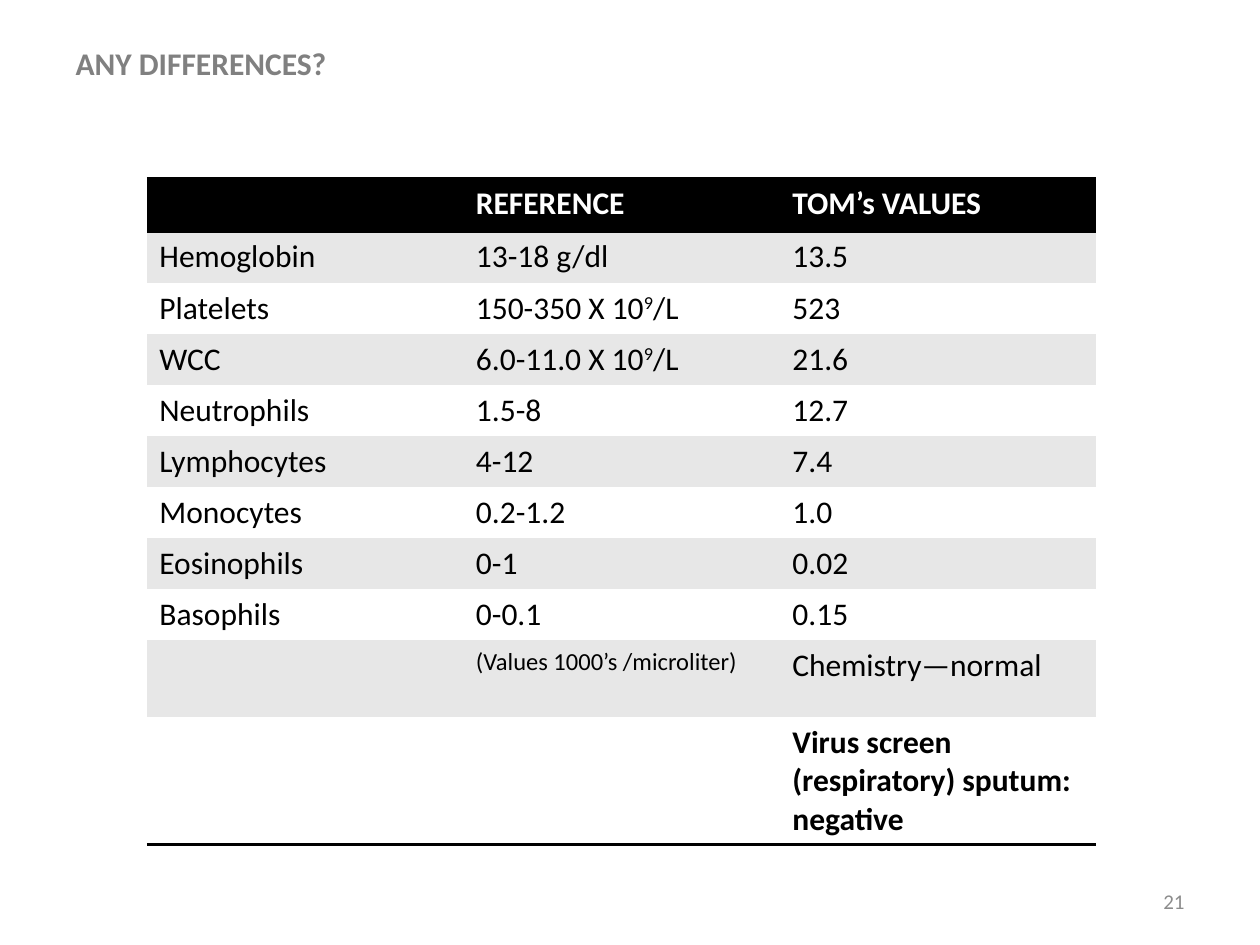
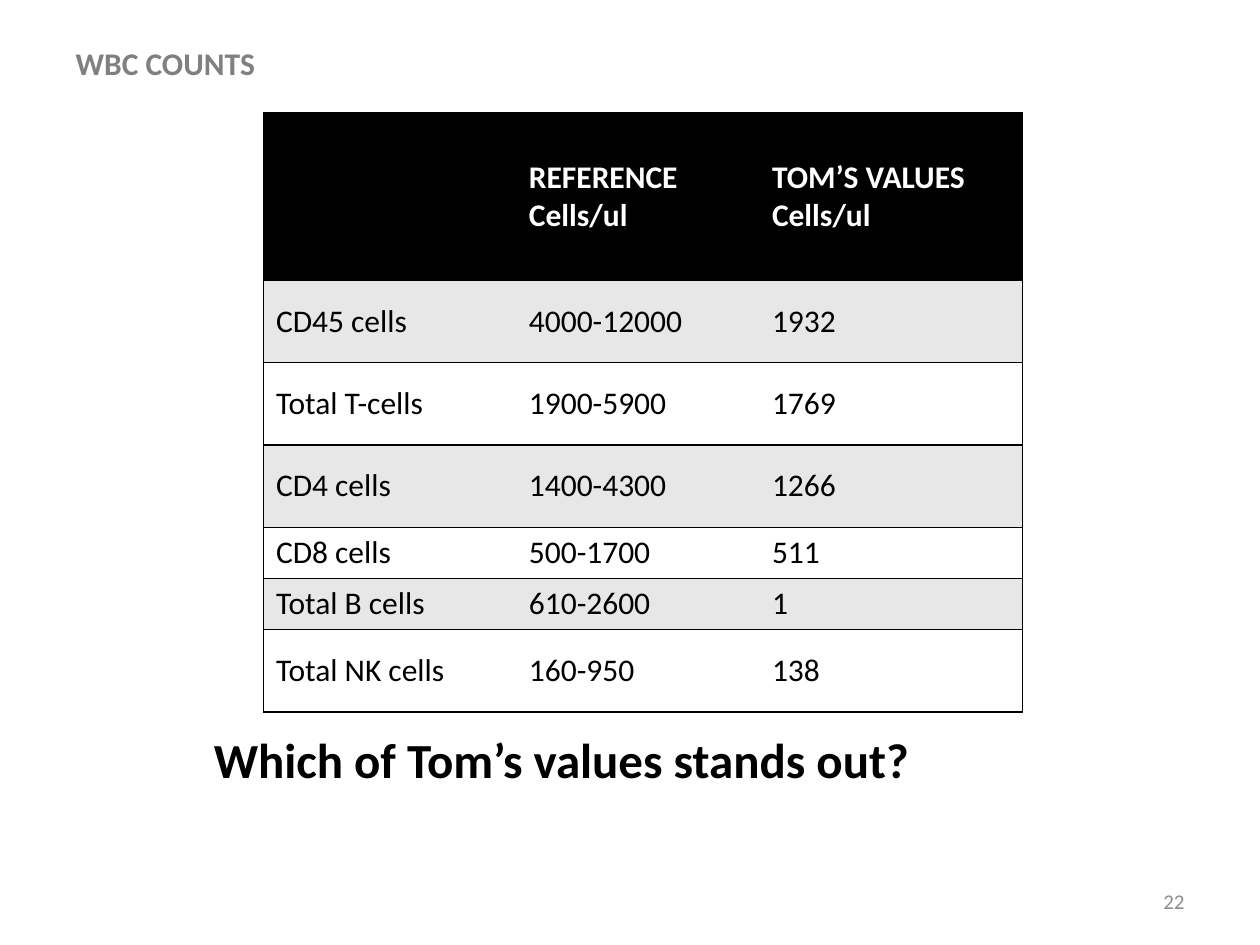
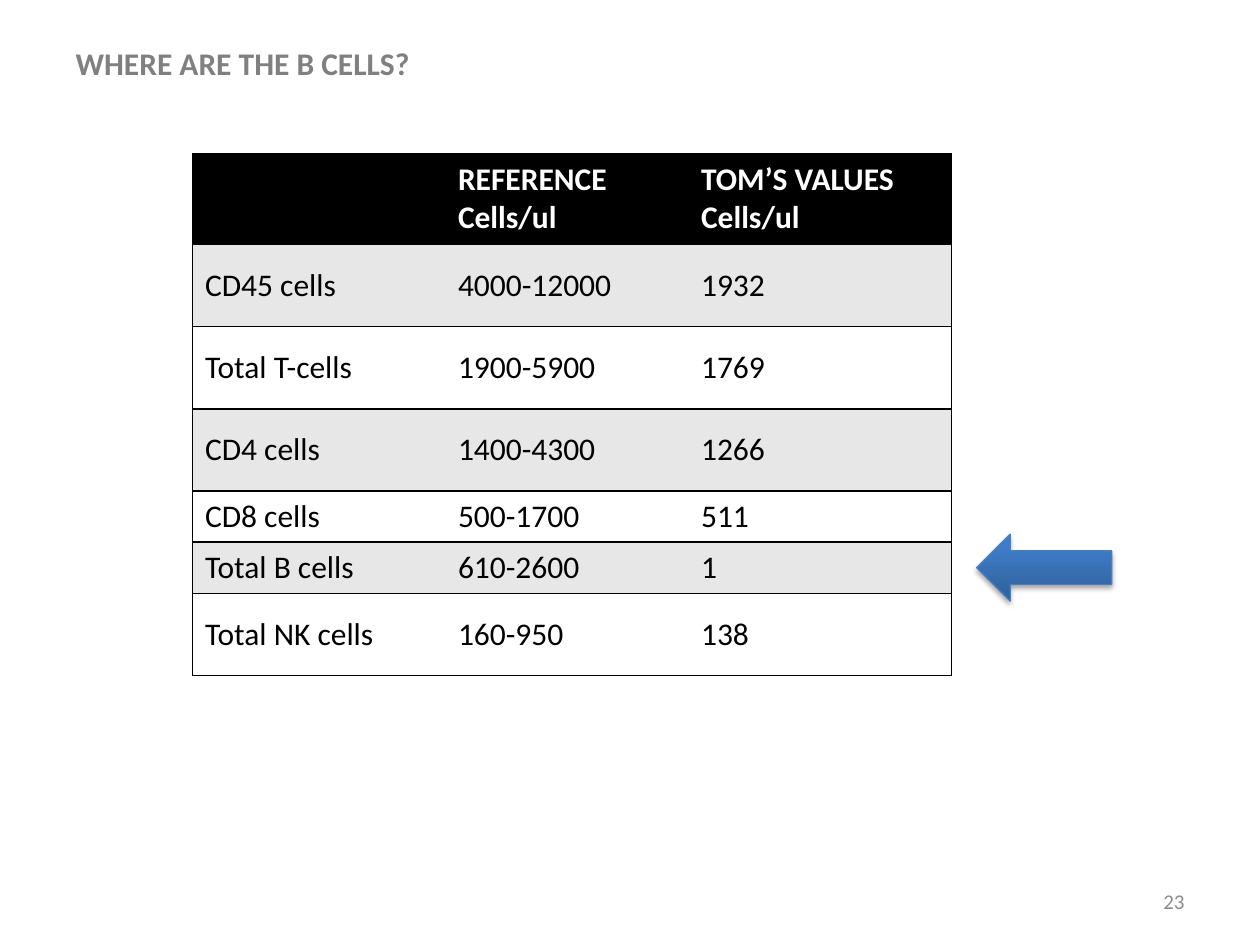
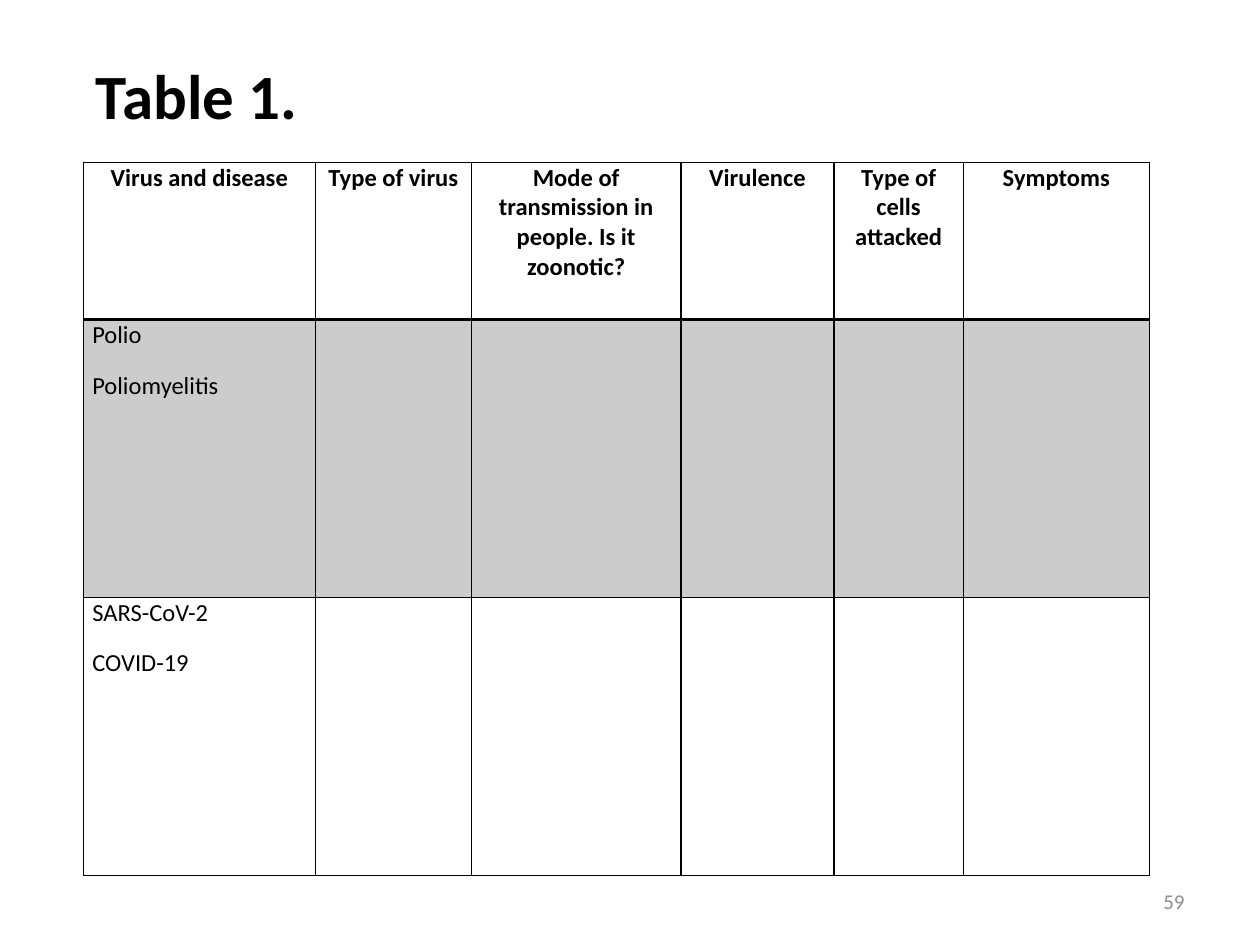
from lxml.etree import SubElement
from pptx import Presentation
from pptx.dml.color import RGBColor
from pptx.enum.shapes import MSO_SHAPE
from pptx.enum.text import MSO_ANCHOR, MSO_AUTO_SIZE, PP_ALIGN
from pptx.oxml import parse_xml
from pptx.oxml.ns import nsdecls, qn
from pptx.util import Cm, Pt

FONT = "Calibri"
BLACK, WHITE, BAND = "000000", "FFFFFF", "E7E7E7"
TITLE_GREY, NUMBER_GREY = "808080", "8C8C8C"
NO_STYLE = "{2D5ABB26-0587-4C30-8999-92F81FD0307C}"

BLOOD_ROWS = [
    ["", "REFERENCE", "TOM’s VALUES"],
    ["Hemoglobin", "13-18 g/dl", "13.5"],
    ["Platelets", "150-350 X 10^9^/L", "523"],
    ["WCC", "6.0-11.0 X 10^9^/L", "21.6"],
    ["Neutrophils", "1.5-8", "12.7"],
    ["Lymphocytes", "4-12", "7.4"],
    ["Monocytes", "0.2-1.2", "1.0"],
    ["Eosinophils", "0-1", "0.02"],
    ["Basophils", "0-0.1", "0.15"],
    ["", "(Values 1000’s /microliter)", "Chemistry—normal"],
    ["", "", "Virus screen (respiratory) sputum: negative"],
]
CELL_ROWS = [
    ["", "REFERENCE\nCells/ul", "TOM’S VALUES\nCells/ul"],
    ["CD45 cells", "4000-12000", "1932"],
    ["Total T-cells", "1900-5900", "1769"],
    ["CD4 cells", "1400-4300", "1266"],
    ["CD8 cells", "500-1700", "511"],
    ["Total B cells", "610-2600", "1"],
    ["Total NK cells", "160-950", "138"],
]
VIRUS_ROWS = [
    ["Virus and disease", "Type of virus", "Mode of transmission in people. Is it zoonotic?",
     "Virulence", "Type of cells attacked", "Symptoms"],
    ["Polio\nPoliomyelitis"] + [""] * 5,
    ["SARS-CoV-2\nCOVID-19"] + [""] * 5,
]


def rgb(color):
    return RGBColor.from_string(color)


def write(tf, text, size=18, color=BLACK, bold=False, align=PP_ALIGN.LEFT, after=0):
    for i, line in enumerate(text.split("\n")):
        p = tf.add_paragraph() if i else tf.paragraphs[0]
        p.alignment, p.space_after = align, Pt(after)
        for j, part in enumerate(line.split("^")):
            if not part:
                continue
            r = p.add_run()
            r.text = part
            r.font.name, r.font.size, r.font.bold = FONT, Pt(size), bold
            r.font.color.rgb = rgb(color)
            if j % 2:
                r.font._element.set("baseline", "30000")


def place(sp, box):
    sp.left, sp.top, sp.width, sp.height = (Cm(v) for v in box)


def add_text(s, box, text, anchor=MSO_ANCHOR.TOP, **fmt):
    sp = s.shapes.add_textbox(*(Cm(v) for v in box))
    tf = sp.text_frame
    tf.word_wrap, tf.vertical_anchor = True, anchor
    write(tf, text, **fmt)


def add_slide(prs, title, number, box, **fmt):
    s = prs.slides.add_slide(prs.slide_layouts[5])
    place(s.shapes.title, box)
    tf = s.shapes.title.text_frame
    tf.word_wrap, tf.vertical_anchor = True, MSO_ANCHOR.TOP
    tf.auto_size = MSO_AUTO_SIZE.SHAPE_TO_FIT_TEXT
    write(tf, title, bold=True, **fmt)
    add_text(s, (18.21, 17.65, 5.92, 1.02), number, MSO_ANCHOR.MIDDLE,
             size=12, color=NUMBER_GREY, align=PP_ALIGN.RIGHT)
    return s


def add_lab_slide(prs, title, number):
    return add_slide(prs, title, number, (1.27, 0.76, 8.5, 1.02), color=TITLE_GREY)


def set_borders(cell, widths):
    tcPr = cell._tc.get_or_add_tcPr()
    sides = [side for side in "LRTB" if side in widths]
    for i, side in enumerate(sides):
        tcPr.insert(i, parse_xml(
            f'<a:ln{side} {nsdecls("a")} w="{Pt(widths[side])}"><a:solidFill>'
            f'<a:srgbClr val="{BLACK}"/></a:solidFill></a:ln{side}>'))


def add_grid(s, left, top, cols, heights, rows, dress):
    frame = s.shapes.add_table(len(rows), len(cols), Cm(left), Cm(top),
                               Cm(sum(cols)), Cm(sum(heights)))
    table = frame.table
    table._tbl.tblPr.find(qn("a:tableStyleId")).text = NO_STYLE
    for column, width in zip(table.columns, cols):
        column.width = Cm(width)
    for row, height in zip(table.rows, heights):
        row.height = Cm(height)
    for i, row in enumerate(rows):
        for j, text in enumerate(row):
            dress(table.cell(i, j), i, j, text)


def fill_banded(cell, i):
    cell.fill.solid()
    cell.fill.fore_color.rgb = rgb(BLACK if i == 0 else BAND if i % 2 else WHITE)


def dress_blood(cell, i, j, text):
    last = len(BLOOD_ROWS) - 1
    note = i == last - 1 and j == 1
    write(cell.text_frame, text, size=14 if note else 18,
          color=WHITE if i == 0 else BLACK, bold=i in (0, last))
    fill_banded(cell, i)
    set_borders(cell, {0: {"T": 2, "B": 2}, last: {"B": 2}}.get(i, {}))


def dress_count(cell, i, j, text):
    cell.vertical_anchor = MSO_ANCHOR.MIDDLE
    write(cell.text_frame, text, color=WHITE if i == 0 else BLACK, bold=i == 0)
    fill_banded(cell, i)
    set_borders(cell, {"T": 1, "B": 1, **{0: {"L": 1}, 2: {"R": 1}}.get(j, {})})


def dress_virus(cell, i, j, text):
    cell.margin_left = cell.margin_right = Cm(0.18)
    cell.margin_top = cell.margin_bottom = 0
    write(cell.text_frame, text, size=14, bold=i == 0, after=12,
          align=PP_ALIGN.LEFT if i else PP_ALIGN.CENTER)
    if i == 1:
        cell.fill.solid()
        cell.fill.fore_color.rgb = rgb(BLACK)
        tint = cell._tc.tcPr.find(".//" + qn("a:srgbClr"))
        SubElement(tint, qn("a:alpha")).set("val", "20000")
    else:
        cell.fill.background()
    set_borders(cell, {"L": 1, "R": 1, "T": 2 if i == 1 else 1, "B": 1 if i else 2})


def add_count_table(s, left, top, header):
    tall, short = 1.66, 1.03
    add_grid(s, left, top, [5.1, 4.9, 5.3],
             [header, tall, tall, tall, short, short, tall], CELL_ROWS, dress_count)


def add_pointer(s, box):
    sp = s.shapes.add_shape(MSO_SHAPE.LEFT_ARROW, *(Cm(v) for v in box))
    sp.fill.gradient()
    sp.fill.gradient_angle = 90
    for stop, color, position in zip(sp.fill.gradient_stops, ("2F5F99", "3D7CC7"), (0, 0.8)):
        stop.color.rgb, stop.position = rgb(color), position
    sp.line.color.rgb, sp.line.width = rgb("4B7EBC"), Pt(0.75)
    sp.shadow.inherit = False
    effects = sp._element.spPr.find(qn("a:effectLst"))
    effects.append(parse_xml(
        f'<a:outerShdw {nsdecls("a")} blurRad="{Pt(3.1)}" dist="{Pt(1.8)}" dir="5400000" '
        f'rotWithShape="0"><a:srgbClr val="{BLACK}"><a:alpha val="35000"/></a:srgbClr>'
        '</a:outerShdw>'))


def add_blood_slide(prs):
    s = add_lab_slide(prs, "ANY DIFFERENCES?", "21")
    add_grid(s, 2.96, 3.6, [6.38] * 3, [1.07] + [1.03] * 8 + [1.54, 2.58],
             BLOOD_ROWS, dress_blood)


def add_counts_slide(prs):
    s = add_lab_slide(prs, "WBC COUNTS", "22")
    add_count_table(s, 5.31, 2.28, 3.37)
    add_text(s, (4.06, 14.58, 18.64, 1.45), "Which of Tom’s values stands out?",
             size=28, bold=True)


def add_b_cells_slide(prs):
    s = add_lab_slide(prs, "WHERE ARE THE B CELLS?", "23")
    add_count_table(s, 3.88, 3.1, 1.82)
    add_pointer(s, (19.69, 10.77, 2.72, 1.35))


def add_virus_slide(prs):
    s = add_slide(prs, "Table 1.", "59", (1.68, 1.02, 9.37, 1.8), size=36)
    add_grid(s, 1.68, 3.28, [4.68, 3.14, 4.23, 3.08, 2.61, 3.75], [3.17, 5.6, 5.6],
             VIRUS_ROWS, dress_virus)


def main():
    prs = Presentation()
    prs.slide_width, prs.slide_height = Cm(25.4), Cm(19.05)
    add_blood_slide(prs)
    add_counts_slide(prs)
    add_b_cells_slide(prs)
    add_virus_slide(prs)
    prs.save("out.pptx")


if __name__ == "__main__":
    main()
